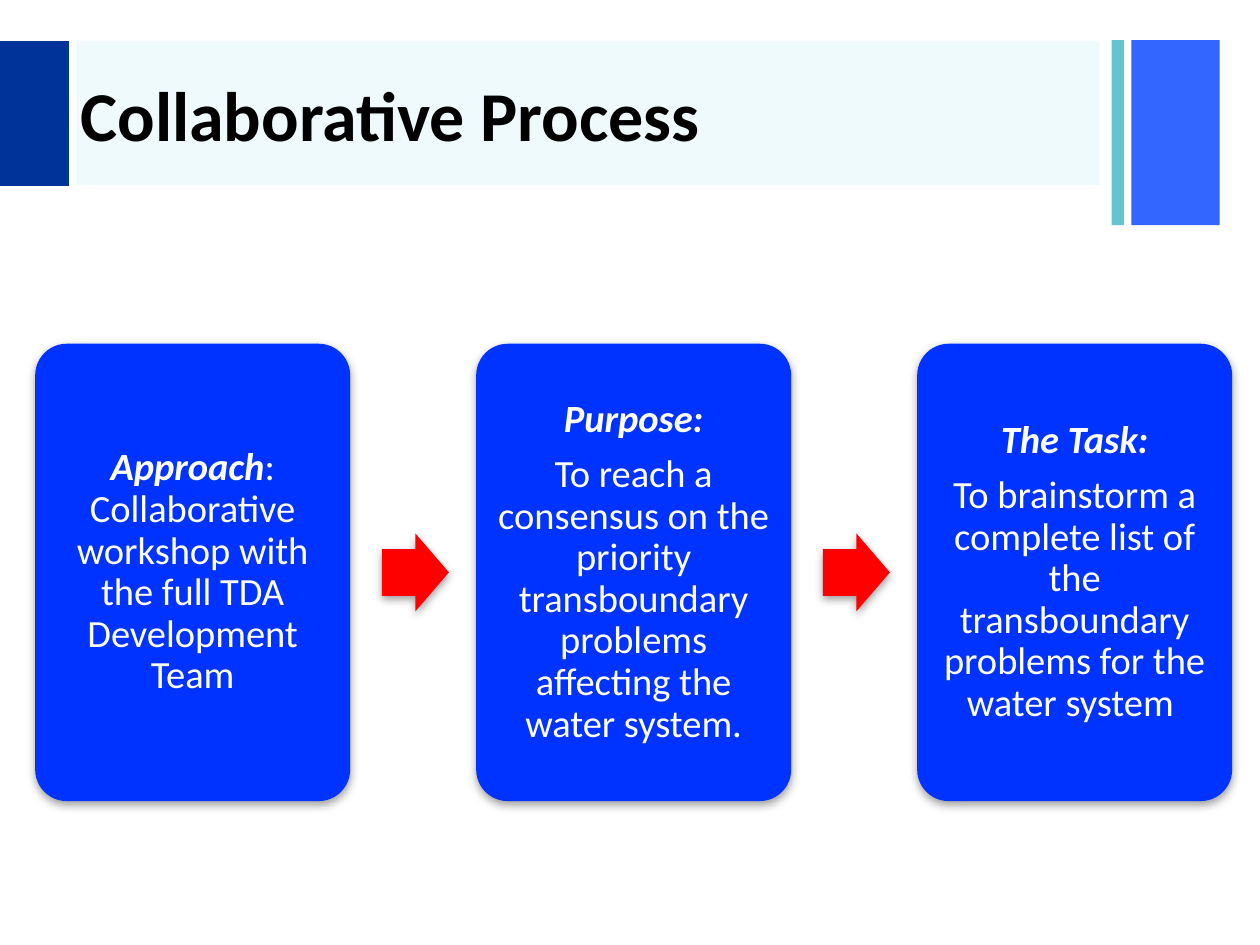
"""Build the Collaborative Process slide: three step cards joined by block arrows."""
from dataclasses import dataclass
from typing import Optional

from lxml.etree import SubElement
from pptx import Presentation
from pptx.dml.color import RGBColor
from pptx.enum.shapes import MSO_SHAPE
from pptx.enum.text import MSO_ANCHOR, PP_ALIGN
from pptx.oxml.ns import qn
from pptx.util import Cm, Pt

CARD_LEFT, CARD_TOP, CARD_WIDTH, CARD_HEIGHT = 0.71, 6.93, 6.35, 9.22
CARD_PITCH = 8.89
ARROW_WIDTH, ARROW_HEIGHT, ARROW_GAP = 1.35, 1.57, 0.64


@dataclass
class Band:
    left: float
    top: float
    width: float
    height: float
    color: str
    opacity: Optional[int] = None


@dataclass
class Step:
    heading: str
    body: str
    same_paragraph: bool = False


BANDS = [
    Band(22.81, 0.81, 1.78, 3.73, "3366FF"),
    Band(22.41, 0.81, 0.25, 3.73, "65C4D2"),
    Band(1.55, 0.82, 20.62, 2.92, "14C5D0", opacity=7),
    Band(0, 0.83, 1.39, 2.92, "003399"),
]
STEPS = [
    Step("Approach", ": Collaborative workshop with the full TDA Development Team", same_paragraph=True),
    Step("Purpose:", "To reach a consensus on the priority transboundary problems affecting the water system."),
    Step("The Task:", "To brainstorm a complete list of the transboundary problems for the water system "),
]


def hex_color(value: str) -> RGBColor:
    return RGBColor.from_string(value)


def place(shape, left: float, top: float, width: float, height: float) -> None:
    shape.left, shape.top, shape.width, shape.height = Cm(left), Cm(top), Cm(width), Cm(height)


def add_block(slide, kind, left, top, width, height, color: str, adjustments=()):
    shape = slide.shapes.add_shape(kind, Cm(left), Cm(top), Cm(width), Cm(height))
    for index, value in enumerate(adjustments):
        shape.adjustments[index] = value
    shape.fill.solid()
    shape.fill.fore_color.rgb = hex_color(color)
    shape.line.fill.background()
    shape.shadow.inherit = False
    return shape


def add_soft_shadow(shape) -> None:
    effects = shape._element.spPr.find(qn("a:effectLst"))
    shadow = SubElement(effects, qn("a:outerShdw"), blurRad=str(Pt(5)), dist=str(Pt(2)),
                        dir="5400000", rotWithShape="0")
    color = SubElement(shadow, qn("a:srgbClr"), val="808080")
    SubElement(color, qn("a:alpha"), val="75000")


def add_text(paragraph, text: str, *, size: float, color: str, bold=False, italic=False,
             align=PP_ALIGN.LEFT, line_spacing: Optional[float] = None, space_after: float = 0) -> None:
    paragraph.alignment = align
    paragraph.line_spacing = line_spacing
    paragraph.space_after = Pt(space_after)
    run = paragraph.add_run()
    run.text = text
    font = run.font
    font.name, font.size, font.bold, font.italic = "Calibri", Pt(size), bold, italic
    font.color.rgb = hex_color(color)


def draw_band(slide, band: Band) -> None:
    shape = add_block(slide, MSO_SHAPE.RECTANGLE, band.left, band.top, band.width, band.height, band.color)
    if band.opacity is not None:
        color = shape._element.spPr.find(qn("a:solidFill")).find(qn("a:srgbClr"))
        SubElement(color, qn("a:alpha"), val=str(band.opacity * 1000))


def draw_title(slide, text: str) -> None:
    title = slide.shapes.title
    place(title, 1.37, 0.86, 21.01, 2.84)
    title.text_frame.vertical_anchor = MSO_ANCHOR.MIDDLE
    add_text(title.text_frame.paragraphs[0], text, size=40, color="000000", bold=True)
    slide.shapes._spTree.append(title._element)


def draw_card(slide, step: Step, left: float) -> None:
    card = add_block(slide, MSO_SHAPE.ROUNDED_RECTANGLE, left, CARD_TOP, CARD_WIDTH, CARD_HEIGHT,
                     "0033FF", [0.1])
    add_soft_shadow(card)
    frame = card.text_frame
    frame.word_wrap = True
    frame.vertical_anchor = MSO_ANCHOR.MIDDLE
    frame.margin_left = frame.margin_right = frame.margin_top = frame.margin_bottom = Cm(0.18)
    style = dict(size=22, color="FFFFFF", align=PP_ALIGN.CENTER, line_spacing=0.9, space_after=7.7)
    heading = frame.paragraphs[0]
    add_text(heading, step.heading, bold=True, italic=True, **style)
    add_text(heading if step.same_paragraph else frame.add_paragraph(), step.body, **style)


def draw_arrow(slide, left: float) -> None:
    top = CARD_TOP + (CARD_HEIGHT - ARROW_HEIGHT) / 2
    arrow = add_block(slide, MSO_SHAPE.RIGHT_ARROW, left, top, ARROW_WIDTH, ARROW_HEIGHT,
                      "FF0000", [0.6, 0.5])
    add_soft_shadow(arrow)


def main() -> None:
    presentation = Presentation()
    presentation.slide_width, presentation.slide_height = Cm(25.4), Cm(19.05)
    slide = presentation.slides.add_slide(presentation.slide_layouts[5])
    for band in BANDS:
        draw_band(slide, band)
    draw_title(slide, "Collaborative Process")
    for index, step in enumerate(STEPS):
        left = CARD_LEFT + index * CARD_PITCH
        draw_card(slide, step, left)
        if index < len(STEPS) - 1:
            draw_arrow(slide, left + CARD_WIDTH + ARROW_GAP)
    presentation.save("out.pptx")


if __name__ == "__main__":
    main()
